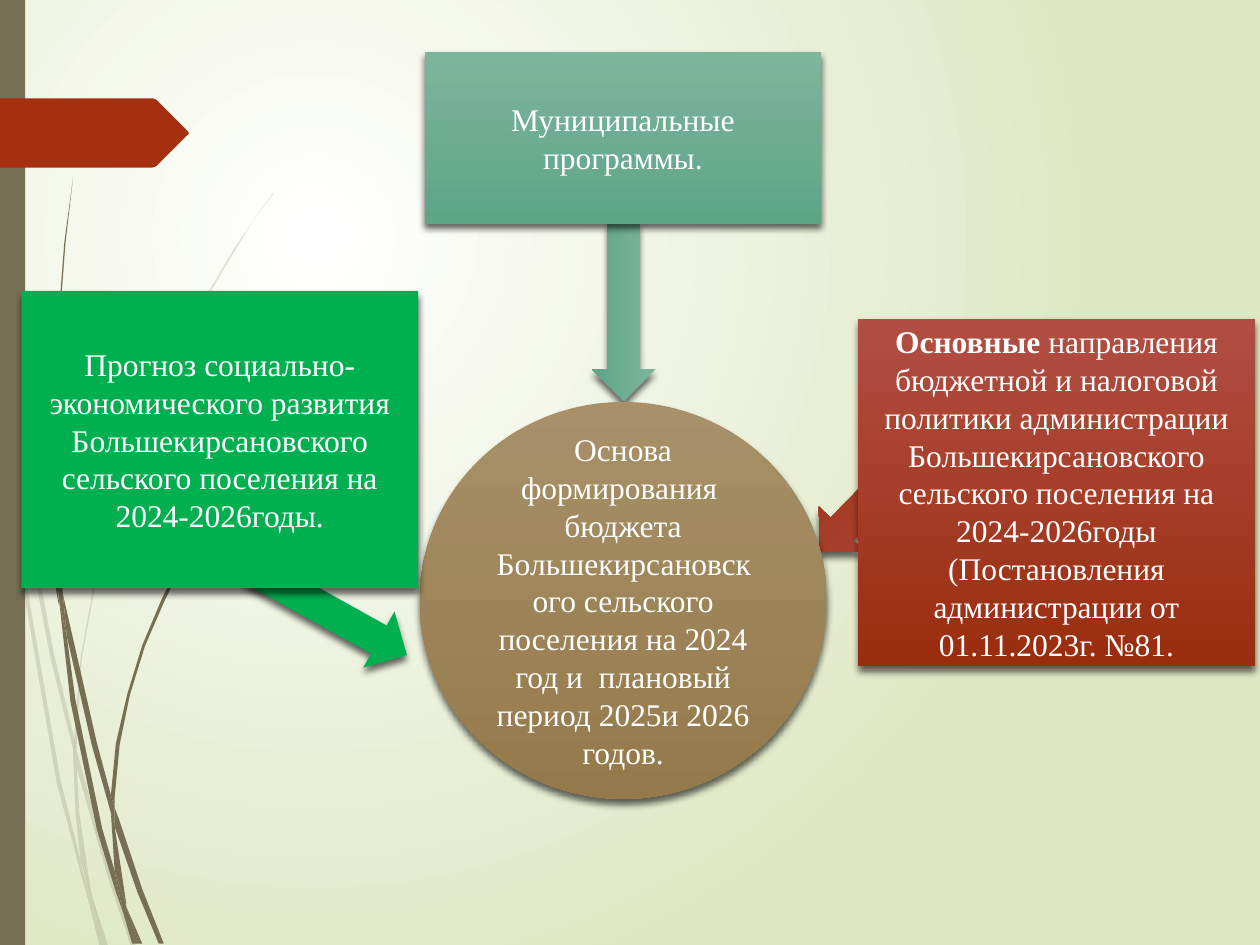
from pptx import Presentation
from pptx import util as u
from pptx.dml.color import RGBColor
from pptx.enum import shapes, text
from pptx.oxml import parse_xml
from pptx.oxml.ns import nsdecls, qn

Pt = u.Pt
KIND = shapes.MSO_SHAPE
COLORS = {
    "white": "FFFFFF", "backdrop": "DFE8C4", "olive": "766F54", "rust": "A53010",
    "green": "00B050", "teal top": "7DB59D", "teal bottom": "5EA588",
    "red top": "B14E43", "red bottom": "9A2D0F",
    "tan top": "A89068", "tan bottom": "947A4B",
}
GREEN = ["green"]
TEAL = ["teal top", "teal bottom"]
RED = ["red top", "red bottom"]
TAN = ["tan top", "tan bottom"]
UNIT = Pt(0.72)  # outline points are in hundredths of an inch


def paint(shape, names):
    """Fill with one colour, or with two from top to bottom; no line."""
    if len(names) == 1:
        shape.fill.solid()
        shape.fill.fore_color.rgb = RGBColor.from_string(COLORS[names[0]])
    else:
        shape.fill.gradient()
        shape.fill.gradient_angle = 270
        for stop, name in zip(shape.fill.gradient_stops, names):
            stop.color.rgb = RGBColor.from_string(COLORS[name])
    shape.line.fill.background()
    shape.shadow.inherit = False


def add_raised(kind, left, top, width, height, names):
    """Add a painted shape with a soft shadow below it."""
    shape = page.shapes.add_shape(kind, Pt(left), Pt(top), Pt(width), Pt(height))
    paint(shape, names)
    shape.element.spPr.find(qn("a:effectLst")).append(parse_xml(
        f'<a:outerShdw {nsdecls("a")} blurRad="{Pt(4)}" dist="{Pt(3)}" dir="5400000" '
        'rotWithShape="0"><a:srgbClr val="000000"><a:alpha val="60000"/></a:srgbClr>'
        '</a:outerShdw>'))
    return shape


deck = Presentation()
deck.slide_width, deck.slide_height = Pt(720), Pt(540)
page = deck.slides.add_slide(deck.slide_layouts[6])

# Background: round glow, centred up and to the left
backdrop = page.background.fill
backdrop.gradient()
for stop, name in zip(backdrop.gradient_stops, ["white", "backdrop"]):
    stop.color.rgb = RGBColor.from_string(COLORS[name])
glow = page.element.find(".//" + qn("a:gradFill"))
glow.replace(glow.find(qn("a:lin")), parse_xml(
    f'<a:path {nsdecls("a")} path="circle">'
    '<a:fillToRect l="50000" t="50000" r="100000" b="100000"/></a:path>'))

# Grass blades: pale ones behind, dark ones in front
pale_blades = [
    [(8, 350), (6, 322), (0, 282), (0, 299), (7, 344)],
    [(40, 522), (59, 599), (59, 586), (43, 520), (10, 345), (12, 376)],
    [(64, 607), (61, 596), (61, 610), (85, 694), (104, 751), (108, 751), (88, 692)],
    [(83, 751), (86, 751), (73, 711)],
    [(64, 683), (48, 619), (22, 469), (12, 376), (8, 350), (19, 470), (45, 621),
     (64, 693), (70, 714), (69, 707)],
    [(58, 599), (60, 646), (64, 683), (67, 692), (73, 711), (72, 706), (63, 646),
     (61, 610), (61, 608)],
    [(61, 584), (65, 522), (76, 462), (91, 405), (111, 349), (134, 295), (159, 245),
     (187, 198), (201, 175), (217, 154), (217, 153), (201, 175), (186, 197),
     (158, 244), (133, 294), (110, 348), (90, 404), (75, 461), (64, 522),
     (59, 584), (59, 586), (61, 596)],
    [(70, 714), (79, 751), (82, 751)],
    [(61, 608), (61, 610), (61, 596), (59, 586), (58, 599)],
    [(67, 692), (65, 683), (69, 707), (70, 714), (82, 751), (83, 751), (73, 711)],
]
dark_blades = [
    [(5, 110), (14, 233), (27, 355), (46, 477), (47, 481), (45, 457), (45, 453),
     (30, 355), (15, 232), (6, 109), (4, 48), (3, 0), (2, 0), (3, 48)],
    [(73, 592), (88, 645), (88, 631), (77, 590), (50, 472), (53, 505)],
    [(94, 649), (91, 641), (91, 656), (109, 708), (126, 749), (130, 749), (113, 706)],
    [(91, 691), (81, 657), (60, 556), (53, 505), (47, 477), (56, 557), (77, 659),
     (92, 708), (97, 722), (96, 717)],
    [(50, 472), (48, 453), (44, 349), (48, 245), (52, 193), (58, 141), (51, 193),
     (47, 245), (43, 349), (45, 449), (49, 472)],
    [(110, 749), (113, 749), (100, 719)],
    [(47, 477), (53, 505), (50, 472), (49, 472), (45, 449), (45, 453)],
    [(91, 633), (95, 591), (103, 552), (115, 513), (131, 476), (149, 440),
     (169, 406), (191, 374), (203, 359), (216, 344), (215, 344), (203, 358),
     (191, 373), (168, 405), (147, 439), (129, 474), (113, 512), (101, 551),
     (92, 590), (88, 631), (91, 641)],
    [(97, 722), (105, 749), (108, 749)],
    [(88, 645), (91, 691), (96, 706), (100, 719), (100, 716), (91, 656), (90, 651)],
    [(88, 645), (90, 651), (91, 656), (91, 641), (88, 631), (88, 633)],
    [(96, 706), (91, 691), (96, 717), (97, 722), (108, 749), (110, 749), (100, 719)],
]
for blades, opacity in [(pale_blades, 20), (dark_blades, 100)]:
    for outline in blades:
        builder = page.shapes.build_freeform(*outline[0], scale=UNIT)
        builder.add_line_segments(outline[1:], close=True)
        blade = builder.convert_to_shape()
        paint(blade, ["olive"])
        if opacity < 100:
            blade.element.spPr.find(".//" + qn("a:srgbClr")).append(
                parse_xml(f'<a:alpha {nsdecls("a")} val="{opacity * 1000}"/>'))

# Left band and page tag
band = page.shapes.add_shape(KIND.RECTANGLE, 0, 0, Pt(14.4), Pt(540))
paint(band, ["olive"])
builder = page.shapes.build_freeform(0, 78, scale=UNIT)
builder.add_line_segments([(121, 78), (124, 79), (149, 104), (150, 105.5), (149, 107),
                           (124, 132), (121, 133), (0, 133)], close=True)
paint(builder.convert_to_shape(), ["rust"])

# Arrows towards the circle
for left, top, turn, names in [
    (136.8, 331.2, 29.1, GREEN),
    (452.9, 260.6, 134.5, RED),
    (305.3, 159.8, 90, TEAL),
]:
    arrow = add_raised(KIND.RIGHT_ARROW, left, top, 102.2, 36.7, names)
    arrow.rotation = turn

# Circle and the three boxes; each paragraph is a list of spans
boxes = [
    (KIND.OVAL, 239.8, 229.7, 232.6, 226.8, TAN,
     [["Основа формирования  бюджета Большекирсановского сельского поселения "
       "на 2024 год и  плановый период 2025и 2026 годов."]]),
    (KIND.RECTANGLE, 242.6, 29.5, 226.8, 98.4, TEAL, [["Муниципальные программы."]]),
    (KIND.RECTANGLE, 490.3, 182, 226.8, 198.5, RED,
     [["Основные", " направления бюджетной и налоговой политики администрации "
       "Большекирсановского сельского поселения на 2024-2026годы"],
      ["(Постановления администрации от 01.11.2023г. №81."]]),
    (KIND.RECTANGLE, 12.2, 166.2, 226.8, 169.9, GREEN,
     [["Прогноз социально-экономического развития Большекирсановского "
       "сельского поселения на 2024-2026годы."]]),
]
for kind, left, top, width, height, names, paragraphs in boxes:
    box = add_raised(kind, left, top, width, height, names)
    frame = box.text_frame
    frame.word_wrap = True
    frame.vertical_anchor = text.MSO_ANCHOR.MIDDLE
    for number, pieces in enumerate(paragraphs):
        para = frame.add_paragraph() if number else frame.paragraphs[0]
        para.alignment = text.PP_ALIGN.CENTER
        for piece in pieces:
            span = para.add_run()
            span.text = piece
            span.font.name = "Times New Roman"
            span.font.size = Pt(18)
            span.font.bold = piece == "Основные"
            span.font.color.rgb = RGBColor.from_string(COLORS["white"])

deck.save("out.pptx")
